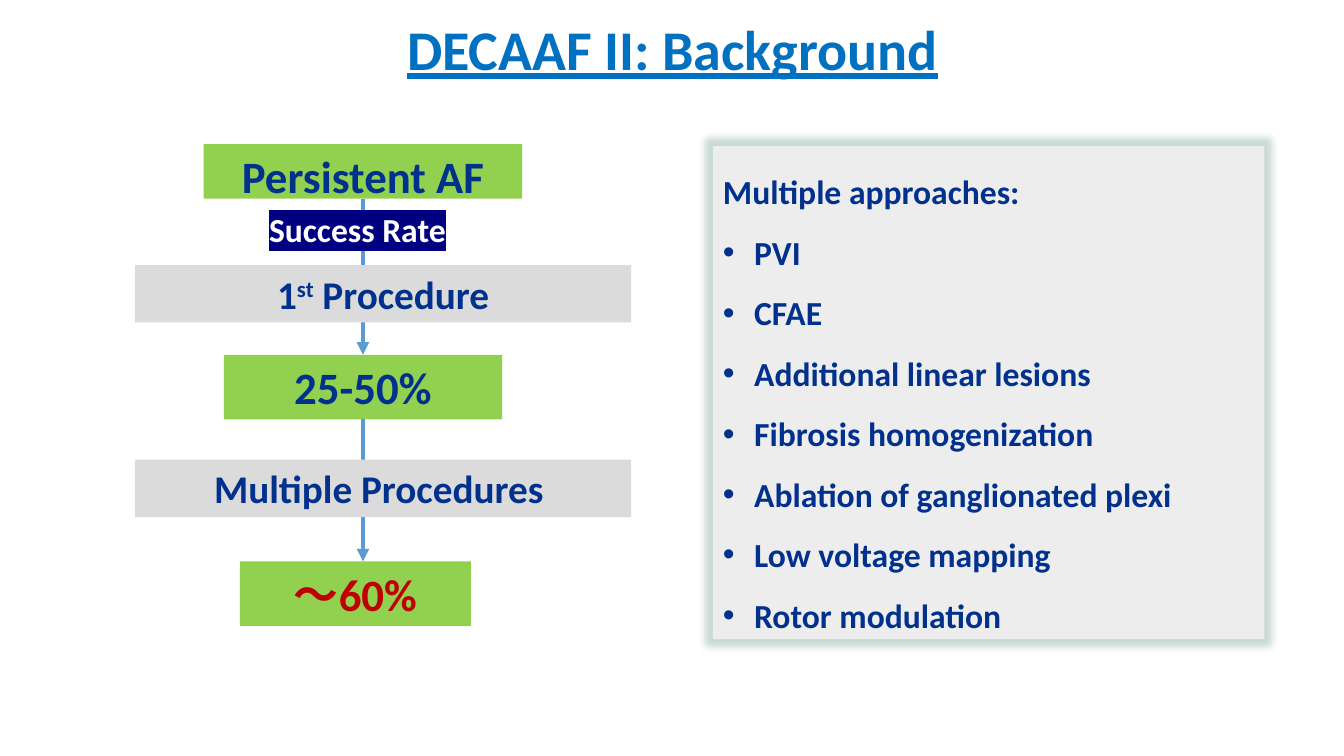
from dataclasses import dataclass

from lxml.etree import SubElement
from pptx import Presentation
from pptx.dml.color import RGBColor
from pptx.enum.shapes import MSO_CONNECTOR, MSO_SHAPE
from pptx.enum.text import MSO_ANCHOR, MSO_AUTO_SIZE, PP_ALIGN
from pptx.oxml.ns import qn
from pptx.util import Pt

PX = 9144  # 100 px to the inch


@dataclass(frozen=True)
class Theme:
    font: str = "Calibri"
    title: str = "0070C0"
    navy: str = "02318D"
    red: str = "C00000"
    white: str = "FFFFFF"
    green: str = "92D050"
    bar: str = "DBDBDB"
    panel: str = "EDEDED"
    glow: str = "78A399"
    arrow: str = "5B9BD5"
    highlight: str = "000080"
    title_size: int = 40
    result_size: int = 32
    step_size: int = 28
    body_size: int = 24


T = Theme()
BULLET_INDENT = 31
APPROACHES = ["PVI", "CFAE", "Additional linear lesions", "Fibrosis homogenization",
              "Ablation of ganglionated plexi", "Low voltage mapping", "Rotor modulation"]


def emu(*lengths):
    return [n * PX for n in lengths]


def rgb(color):
    return RGBColor.from_string(color)


def place(sp, box):
    sp.left, sp.top, sp.width, sp.height = emu(*box)


def add_run(p, text, size, color, highlight=None):
    r = p.add_run()
    r.text = text
    r.font.size = Pt(size)
    r.font.bold = True
    r.font.color.rgb = rgb(color)
    if highlight:
        mark = SubElement(r.font._element, qn("a:highlight"))
        SubElement(mark, qn("a:srgbClr"), val=highlight)
    r.font.name = T.font
    return r


def prepare_frame(sp):
    tf = sp.text_frame
    tf.word_wrap = True
    tf.auto_size = MSO_AUTO_SIZE.NONE
    tf.vertical_anchor = MSO_ANCHOR.TOP
    return tf


def add_title(s, box):
    sp = s.shapes.title
    place(sp, box)
    p = prepare_frame(sp).paragraphs[0]
    p.alignment = PP_ALIGN.CENTER
    p.line_spacing = 0.9
    add_run(p, "DECAAF II: Background", T.title_size, T.title).font.underline = True


def add_block(s, box, fill):
    """Add a filled rectangle; return it with its centred paragraph."""
    sp = s.shapes.add_shape(MSO_SHAPE.RECTANGLE, *emu(*box))
    sp.shadow.inherit = False
    sp.fill.solid()
    sp.fill.fore_color.rgb = rgb(fill)
    sp.line.fill.background()
    p = prepare_frame(sp).paragraphs[0]
    p.alignment = PP_ALIGN.CENTER
    return sp, p


def add_result(s, box, text, color):
    sp, p = add_block(s, box, T.green)
    add_run(p, text, T.result_size, color)
    return sp


def add_arrow(s, start, x, y):
    """Arrow from the bottom of the start block down to a point."""
    cx = s.shapes.add_connector(MSO_CONNECTOR.STRAIGHT, *emu(x, y, x, y))
    cx.begin_connect(start, 2)
    cx.line.color.rgb = rgb(T.arrow)
    cx.line.width = Pt(3)
    SubElement(cx.line._get_or_add_ln(), qn("a:tailEnd"), type="triangle")
    SubElement(cx._element.spPr, qn("a:effectLst"))
    return cx


def add_flow(s, box):
    """Procedures and their success rates, top to bottom."""
    x, y, w, h = box
    axis = x + 226
    start = add_result(s, (axis - 158, y, 316, 54), "Persistent AF", T.navy)
    first = add_result(s, (axis - 138, y + 209, 276, 64), "25-50%", T.navy)
    add_result(s, (x + 104, y + h - 64, 229, 64), "～60%", T.red)

    add_arrow(s, start, axis, y + 209).end_connect(first, 0)
    add_arrow(s, first, axis, y + h - 64)

    p = add_block(s, (x, y + 120, w, 57), T.bar)[1]
    add_run(p, "1", T.step_size, T.navy)
    add_run(p, "st", T.step_size, T.navy).font._element.set("baseline", "30000")
    add_run(p, " Procedure", T.step_size, T.navy)
    p = add_block(s, (x, y + 313, w, 57), T.bar)[1]
    add_run(p, "Multiple Procedures ", T.step_size, T.navy)

    label = s.shapes.add_textbox(*emu(x + 123, y + 59, 205, 50))
    p = prepare_frame(label).paragraphs[0]
    add_run(p, "Success Rate", T.body_size, T.white, T.highlight)


def add_glow(sp):
    sp.shadow.inherit = False
    effects = sp._element.spPr.find(qn("a:effectLst"))
    glow = SubElement(effects, qn("a:glow"), rad=str(Pt(11)))
    color = SubElement(glow, qn("a:srgbClr"), val=T.glow)
    SubElement(color, qn("a:alpha"), val="40000")


def add_approaches(s, box):
    sp = s.placeholders[1]
    place(sp, box)
    sp.fill.solid()
    sp.fill.fore_color.rgb = rgb(T.panel)
    add_glow(sp)
    tf = prepare_frame(sp)
    for i, text in enumerate(["Multiple approaches:"] + APPROACHES):
        p = tf.add_paragraph() if i else tf.paragraphs[0]
        p.line_spacing = 1.5
        p.space_before = Pt(0)
        pPr = p._p.get_or_add_pPr()
        indent = BULLET_INDENT * PX if i else 0
        pPr.set("marL", str(indent))
        pPr.set("indent", str(-indent))
        if i:
            SubElement(pPr, qn("a:buFont"), typeface="Arial")
            SubElement(pPr, qn("a:buChar"), char="•")
        else:
            SubElement(pPr, qn("a:buNone"))
        add_run(p, text, T.body_size, T.navy)


def main():
    prs = Presentation()
    prs.slide_width, prs.slide_height = emu(1333, 750)
    s = prs.slides.add_slide(prs.slide_layouts[1])
    add_title(s, (179, 17, 976, 83))
    add_flow(s, (134, 143, 492, 478))
    add_approaches(s, (707, 145, 547, 489))
    prs.save("out.pptx")


if __name__ == "__main__":
    main()
